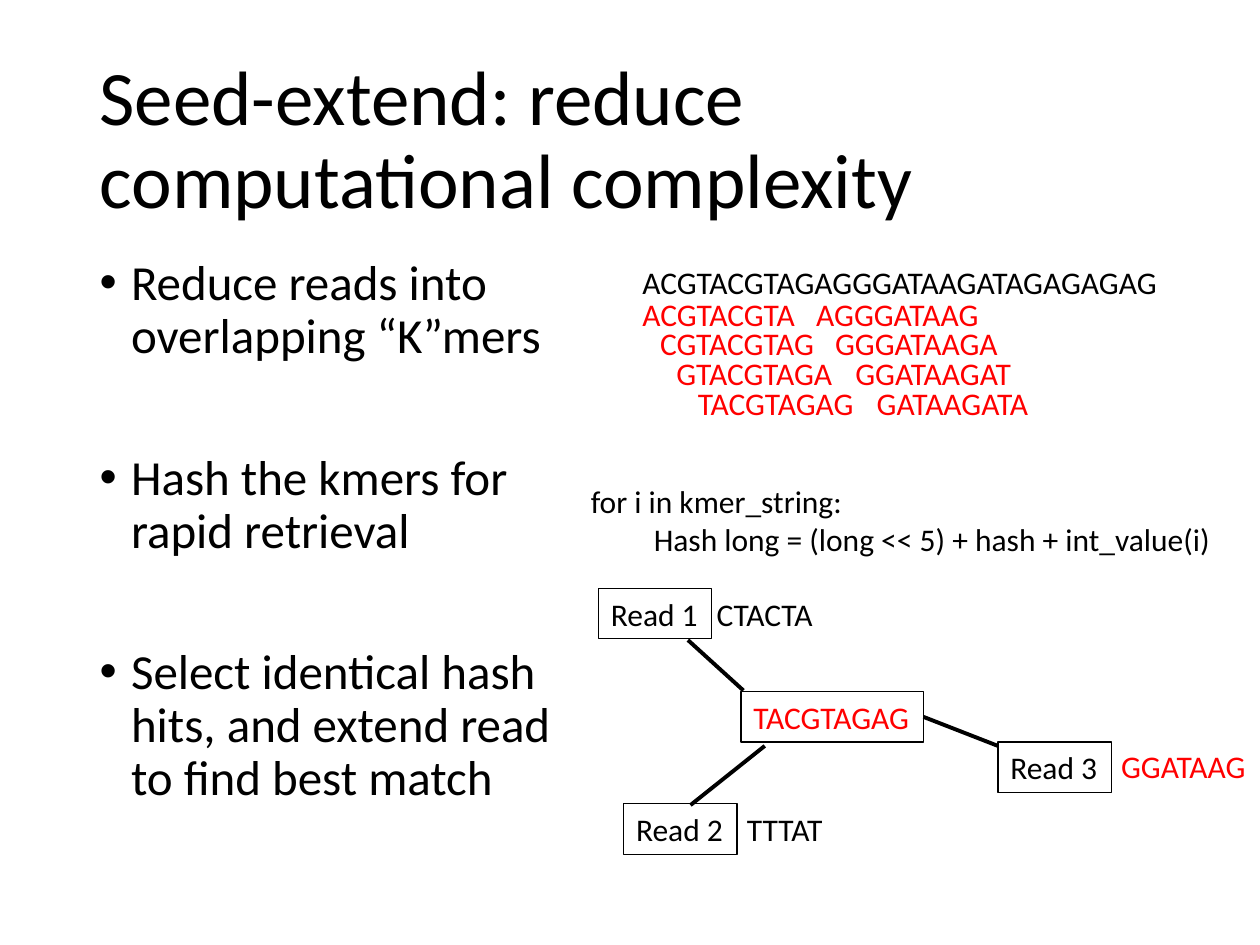
from dataclasses import dataclass

from lxml import etree
from pptx import Presentation
from pptx.dml.color import RGBColor
from pptx.enum.shapes import MSO_CONNECTOR, MSO_SHAPE
from pptx.enum.text import MSO_ANCHOR, MSO_AUTO_SIZE, PP_ALIGN
from pptx.oxml.ns import qn
from pptx.shapes.autoshape import Shape
from pptx.slide import Slide
from pptx.text.text import TextFrame
from pptx.util import Emu, Pt

PX_PER_INCH = 100
EMU_PER_PX = 914400 // PX_PER_INCH
FONT_NAME = "Calibri"
BLACK = RGBColor(0x00, 0x00, 0x00)
RED = RGBColor(0xFF, 0x00, 0x00)
LEFT = PP_ALIGN.LEFT
TOP = MSO_ANCHOR.TOP
MIDDLE = MSO_ANCHOR.MIDDLE
NO_AUTOFIT = MSO_AUTO_SIZE.NONE
FIT_SHAPE = MSO_AUTO_SIZE.SHAPE_TO_FIT_TEXT
RECTANGLE = MSO_SHAPE.RECTANGLE
STRAIGHT = MSO_CONNECTOR.STRAIGHT
LABEL_HEIGHT = 40
LABEL_SIZE = 18
READ_WIDTH = 90
INDENT = 25
TAB = 50


@dataclass(frozen=True)
class Label:
    text: str
    left: int
    top: int
    width: int
    color: RGBColor = BLACK
    height: int = LABEL_HEIGHT


@dataclass(frozen=True)
class Link:
    start: tuple[int, int]
    end: tuple[int, int]


TITLE = "Seed-extend: reduce computational complexity"
STEPS = [
    "Reduce reads into overlapping “K”mers",
    "Hash the kmers for rapid retrieval",
    "Select identical hash hits, and extend read to find best match",
]
KMER_TOPS = [229, 252, 276, 300]
KMER_COLUMNS = [
    [("ACGTACGTA", 500, 142), ("CGTACGTAG", 514, 144),
     ("GTACGTAGA", 527, 145), ("TACGTAGAG", 544, 145)],
    [("AGGGATAAG", 638, 150), ("GGGATAAGA", 653, 150),
     ("GGATAAGAT", 669, 145), ("GATAAGATA", 686, 141)],
]
KMERS = [
    Label(text, left, top, width, RED)
    for column in KMER_COLUMNS
    for top, (text, left, width) in zip(KMER_TOPS, column)
]
TEXTS = [
    Label("ACGTACGTAGAGGGATAAGATAGAGAGAG", 500, 204, 432),
    *KMERS,
    Label("for i in kmer_string:\n\tHash long = (long << 5) + hash + int_value(i)",
          459, 378, 518, height=71),
    Label("CTACTA", 559, 467, 97),
    Label("TTTAT", 583, 638, 81),
    Label("GGATAAG", 880, 588, 120, RED),
]
BOXES = [
    Label("TACGTAGAG", 588, 549, 145, RED),
    Label("Read 1", 475, 467, READ_WIDTH),
    Label("Read 2", 495, 638, READ_WIDTH),
    Label("Read 3", 792, 589, READ_WIDTH),
]
LINKS = [
    Link((590, 548), (546, 508)),
    Link((607, 592), (548, 639)),
    Link((733, 569), (792, 592)),
]


def px(length: int) -> Emu:
    return Emu(length * EMU_PER_PX)


def apply(target: object, values: dict) -> None:
    for name, value in values.items():
        setattr(target, name, value)


def write(text_frame: TextFrame, lines: list[str], size: int,
          color: RGBColor, paragraph_format: dict) -> None:
    text_frame.text = "\n".join(lines)
    for paragraph in text_frame.paragraphs:
        apply(paragraph, {"alignment": LEFT, **paragraph_format})
        for run in paragraph.runs:
            apply(run.font, {"name": FONT_NAME, "size": Pt(size)})
            run.font.color.rgb = color


def place(shape: Shape, left: int, top: int, width: int, height: int) -> None:
    apply(shape, {"left": px(left), "top": px(top),
                  "width": px(width), "height": px(height)})


def fill_title(slide: Slide) -> None:
    title = slide.shapes.title
    place(title, 69, 40, 862, 145)
    apply(title.text_frame, {"vertical_anchor": MIDDLE, "word_wrap": True,
                             "auto_size": NO_AUTOFIT})
    write(title.text_frame, [TITLE], 44, BLACK, {"line_spacing": 0.9})


def fill_steps(slide: Slide) -> None:
    body = slide.placeholders[1]
    place(body, 69, 200, 381, 476)
    apply(body.text_frame, {"vertical_anchor": TOP, "word_wrap": True,
                            "auto_size": NO_AUTOFIT})
    write(body.text_frame, STEPS, 28, BLACK,
          {"line_spacing": 0.9, "space_before": Pt(50.7), "space_after": Pt(0)})
    body.text_frame.paragraphs[0].space_before = Pt(10)
    for paragraph in body.text_frame.paragraphs:
        properties = paragraph._p.get_or_add_pPr()
        properties.set("marL", str(px(INDENT)))
        properties.set("indent", str(-px(INDENT)))
        etree.SubElement(properties, qn("a:buFont"), typeface="Arial")
        etree.SubElement(properties, qn("a:buChar"), char="•")


def write_label(shape: Shape, label: Label) -> None:
    apply(shape.text_frame, {"word_wrap": False, "auto_size": FIT_SHAPE,
                             "vertical_anchor": TOP})
    write(shape.text_frame, label.text.split("\n"), LABEL_SIZE, label.color, {})
    for paragraph in shape.text_frame.paragraphs:
        paragraph._p.get_or_add_pPr().set("defTabSz", str(px(TAB)))


def draw_text(slide: Slide, label: Label) -> None:
    shape = slide.shapes.add_textbox(
        px(label.left), px(label.top), px(label.width), px(label.height))
    write_label(shape, label)


def draw_box(slide: Slide, label: Label) -> None:
    shape = slide.shapes.add_shape(
        RECTANGLE, px(label.left), px(label.top), px(label.width), px(label.height))
    shape.shadow.inherit = False
    shape.fill.background()
    shape.line.color.rgb = BLACK
    shape.line.width = Pt(0.75)
    write_label(shape, label)


def draw_link(slide: Slide, link: Link) -> None:
    connector = slide.shapes.add_connector(
        STRAIGHT, *map(px, link.start), *map(px, link.end))
    connector.line.color.rgb = BLACK
    connector.line.width = Pt(2.25)
    etree.SubElement(connector._element.spPr, qn("a:effectLst"))


def main() -> None:
    presentation = Presentation()
    apply(presentation, {"slide_width": px(1000), "slide_height": px(750)})
    slide = presentation.slides.add_slide(presentation.slide_layouts[1])
    fill_title(slide)
    fill_steps(slide)
    for label in TEXTS:
        draw_text(slide, label)
    for link in LINKS:
        draw_link(slide, link)
    for label in BOXES:
        draw_box(slide, label)
    presentation.save("out.pptx")


if __name__ == "__main__":
    main()
